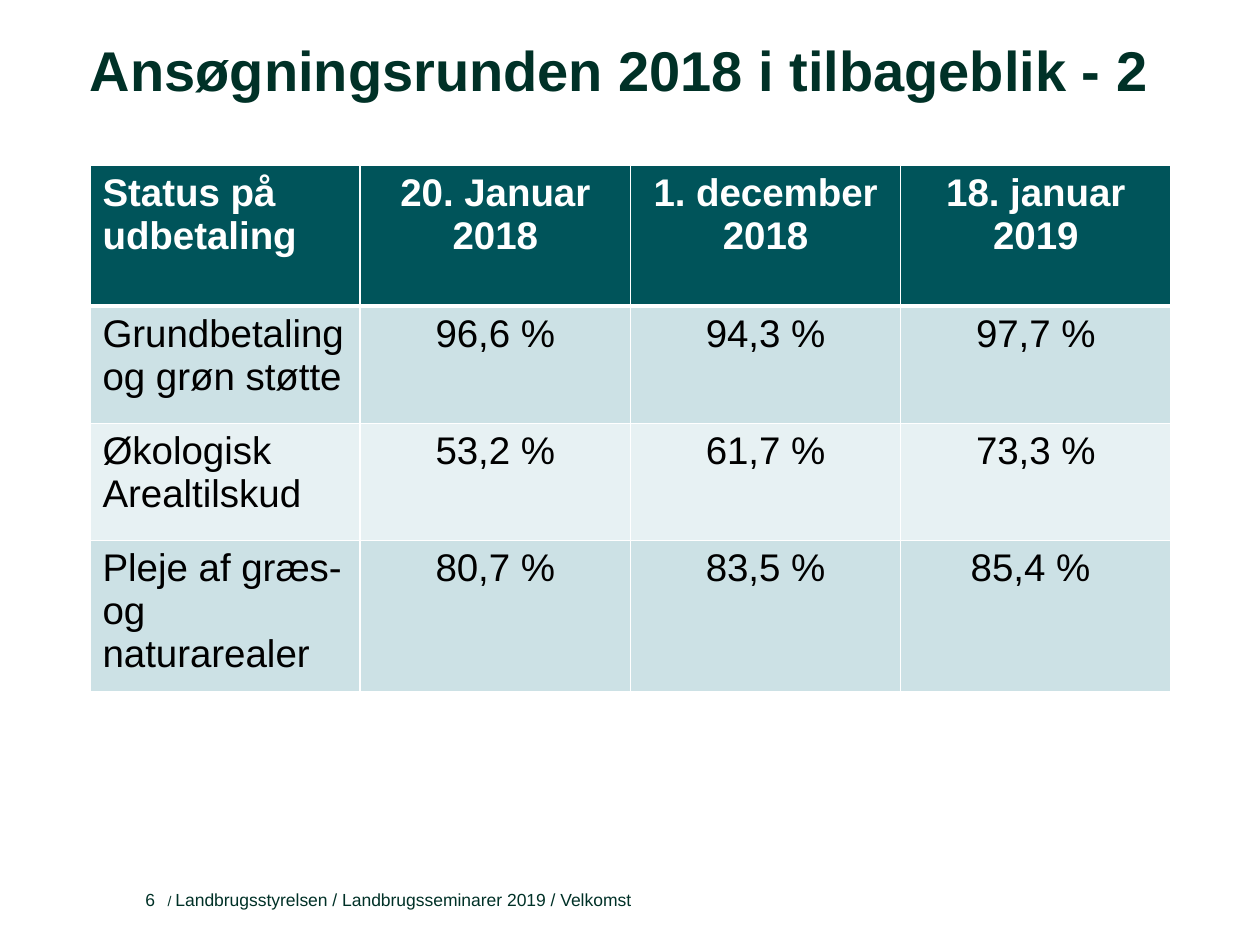
from lxml.etree import SubElement
from pptx import Presentation
from pptx.dml.color import RGBColor
from pptx.enum.text import MSO_ANCHOR, PP_ALIGN
from pptx.oxml.ns import qn
from pptx.util import Inches, Pt

COLORS = {"ink": "003127", "header": "00545A", "odd": "CCE1E5",
          "even": "E7F1F3", "white": "FFFFFF", "black": "000000"}

prs = Presentation()
prs.slide_width, prs.slide_height = Inches(10), Inches(7.5)
W, H = prs.slide_width, prs.slide_height
s = prs.slides.add_slide(prs.slide_layouts[6])

LEFT, TABLE_W = 0.0714 * W, 0.858 * W
FOOT_TOP, FOOT_H = 0.933 * H, 0.03 * H


def add_run(p, text, size, color, bold=False):
    r = p.add_run()
    r.text = text
    for name, value in {"name": "Arial", "size": Pt(size), "bold": bold}.items():
        setattr(r.font, name, value)
    r.font.color.rgb = RGBColor.from_string(COLORS[color])


def add_text(box, runs, anchor, align, spacing=None):
    tf = s.shapes.add_textbox(*(int(v) for v in box)).text_frame
    frame = {"margin_left": 0, "margin_top": 0, "margin_right": 0,
             "margin_bottom": 0, "word_wrap": True, "vertical_anchor": anchor}
    for name, value in frame.items():
        setattr(tf, name, value)
    p = tf.paragraphs[0]
    p.alignment, p.line_spacing = align, spacing
    for text, size, bold in runs:
        add_run(p, text, size, "ink", bold)


add_text((LEFT, 0.045 * H, TABLE_W, 0.068 * H),
         [("Ansøgningsrunden 2018 i tilbageblik - 2", 32, True)],
         MSO_ANCHOR.TOP, PP_ALIGN.LEFT, 0.91)

rows = [
    ("Status på udbetaling", "20. Januar 2018", "1. december 2018", "18. januar 2019"),
    ("Grundbetaling og grøn støtte", "96,6 %", "94,3 %", "97,7 %"),
    ("Økologisk Arealtilskud", "53,2 %", "61,7 %", "73,3 %"),
    ("Pleje af græs- og naturarealer", "80,7 %", "83,5 %", "85,4 % "),
]
heights = [int(share * H) for share in (0.149, 0.124, 0.124, 0.149)]
fills = ("header", "odd", "even", "odd")

table = s.shapes.add_table(len(rows), len(rows[0]), int(LEFT), int(0.175 * H),
                           int(TABLE_W), sum(heights)).table
for i, row in enumerate(rows):
    table.rows[i].height = heights[i]
    for j, text in enumerate(row):
        cell = table.cell(i, j)
        tcPr = cell._tc.get_or_add_tcPr()
        widths = {"lnL": 1, "lnR": 1, "lnT": 3 if i == 1 else 1, "lnB": 3 if i == 0 else 1}
        for side, width in widths.items():
            ln = SubElement(tcPr, qn(f"a:{side}"), w=str(Pt(width)))
            SubElement(SubElement(ln, qn("a:solidFill")), qn("a:srgbClr"), val=COLORS["white"])
        cell.fill.solid()
        cell.fill.fore_color.rgb = RGBColor.from_string(COLORS[fills[i]])
        p = cell.text_frame.paragraphs[0]
        p.alignment = PP_ALIGN.CENTER if j else PP_ALIGN.LEFT
        add_run(p, text, 22, "black" if i else "white", i == 0)

add_text((0.09 * W, FOOT_TOP, 0.033 * W, FOOT_H), [("6", 10, False)],
         MSO_ANCHOR.BOTTOM, PP_ALIGN.RIGHT)
add_text((0.133 * W, FOOT_TOP, 0.398 * W, FOOT_H),
         [("/ ", 8, False),
          ("Landbrugsstyrelsen / Landbrugsseminarer 2019 / Velkomst", 10, False)],
         MSO_ANCHOR.BOTTOM, PP_ALIGN.LEFT)

prs.save("out.pptx")
